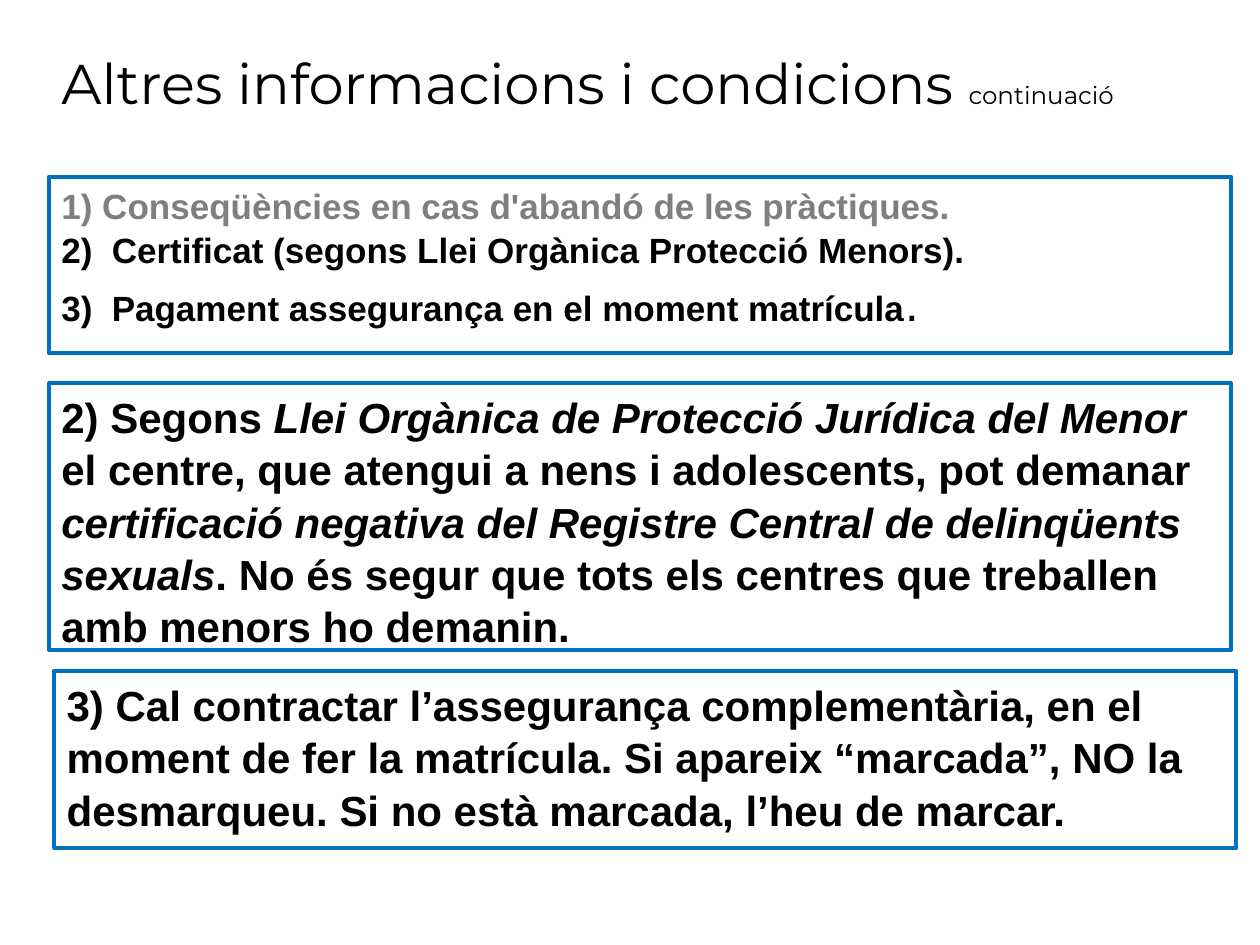
from pptx import Presentation
from pptx.dml.color import RGBColor
from pptx.enum import shapes, text
from pptx.util import Pt

BLACK, GREY, BLUE = "000000", "7F7F7F", "0070C0"


def paint(code):
    return RGBColor.from_string(code)


def write(par, runs, face, size, color=BLACK, bold=True):
    """Fill a paragraph with runs given as (words, changes to the font)."""
    par.alignment = text.PP_ALIGN.LEFT
    par.line_spacing = 1.04
    for words, extra in runs:
        run = par.add_run()
        run.text = words
        font = run.font
        font.name, font.size, font.bold = face, Pt(size), bold
        font.color.rgb = paint(color)
        for key, value in extra.items():
            setattr(font, key, value)


def title(slide, left, top, width, height):
    frame = slide.shapes.add_textbox(
        Pt(left), Pt(top), Pt(width), Pt(height)).text_frame
    frame.word_wrap = True
    write(frame.paragraphs[0],
          [("Altres informacions i condicions ", {}),
           ("continuació", {"size": Pt(14)})],
          "Montserrat", 32, bold=False)


def panel(slide, left, top, width, height):
    """Draw an outlined box and return its text frame."""
    box = slide.shapes.add_shape(
        shapes.MSO_SHAPE.RECTANGLE, Pt(left), Pt(top), Pt(width), Pt(height))
    box.shadow.inherit = False
    box.fill.background()
    box.line.color.rgb = paint(BLUE)
    box.line.width = Pt(2.25)
    frame = box.text_frame
    frame.word_wrap = True
    frame.vertical_anchor = text.MSO_ANCHOR.TOP
    return frame


def topics(slide, left, top, width, height):
    frame = panel(slide, left, top, width, height)
    rows = [
        (GREY, [("1) Conseqüències en cas d'abandó de les pràctiques.", {})]),
        (BLACK, [("2)\tCertificat (segons Llei Orgànica Protecció Menors).", {})]),
        (BLACK, [("3)\tPagament assegurança en el moment matrícula", {}),
                 (".", {"size": Pt(28), "bold": False})]),
    ]
    for i, (color, runs) in enumerate(rows):
        par = frame.add_paragraph() if i else frame.paragraphs[0]
        # Hanging indent: the tab stops at the left margin
        props = par._p.get_or_add_pPr()
        props.set("marL", str(Pt(28.8)))
        props.set("indent", str(-Pt(28.8)))
        write(par, runs, "Arial", 20, color)


def note(slide, left, top, width, height, runs):
    frame = panel(slide, left, top, width, height)
    write(frame.paragraphs[0], runs, "Arial", 24)


def main():
    deck = Presentation()
    deck.slide_width, deck.slide_height = Pt(720), Pt(540)
    slide = deck.slides.add_slide(deck.slide_layouts[6])
    left, wide = 28, 675.5
    slant = {"italic": True}

    title(slide, left, 22.5, 660, 72)
    topics(slide, left, 101, wide, 101)
    # Certificate
    note(slide, left, 219, wide, 152.5, [
        ("2) Segons ", {}),
        ("Llei Orgànica de Protecció Jurídica del Menor ", slant),
        ("el centre, que atengui a nens i adolescents, pot demanar ", {}),
        ("certificació negativa del Registre Central de delinqüents sexuals",
         slant),
        (". No és segur que tots els centres que treballen amb menors "
         "ho demanin.", {}),
    ])
    # Insurance
    note(slide, left + 3, 383.5, wide, 101, [
        ("3) Cal contractar l’assegurança complementària, en el moment de fer "
         "la matrícula. Si apareix “marcada”, NO la desmarqueu. Si no està "
         "marcada, l’heu de marcar.", {}),
    ])
    deck.save("out.pptx")


if __name__ == "__main__":
    main()
